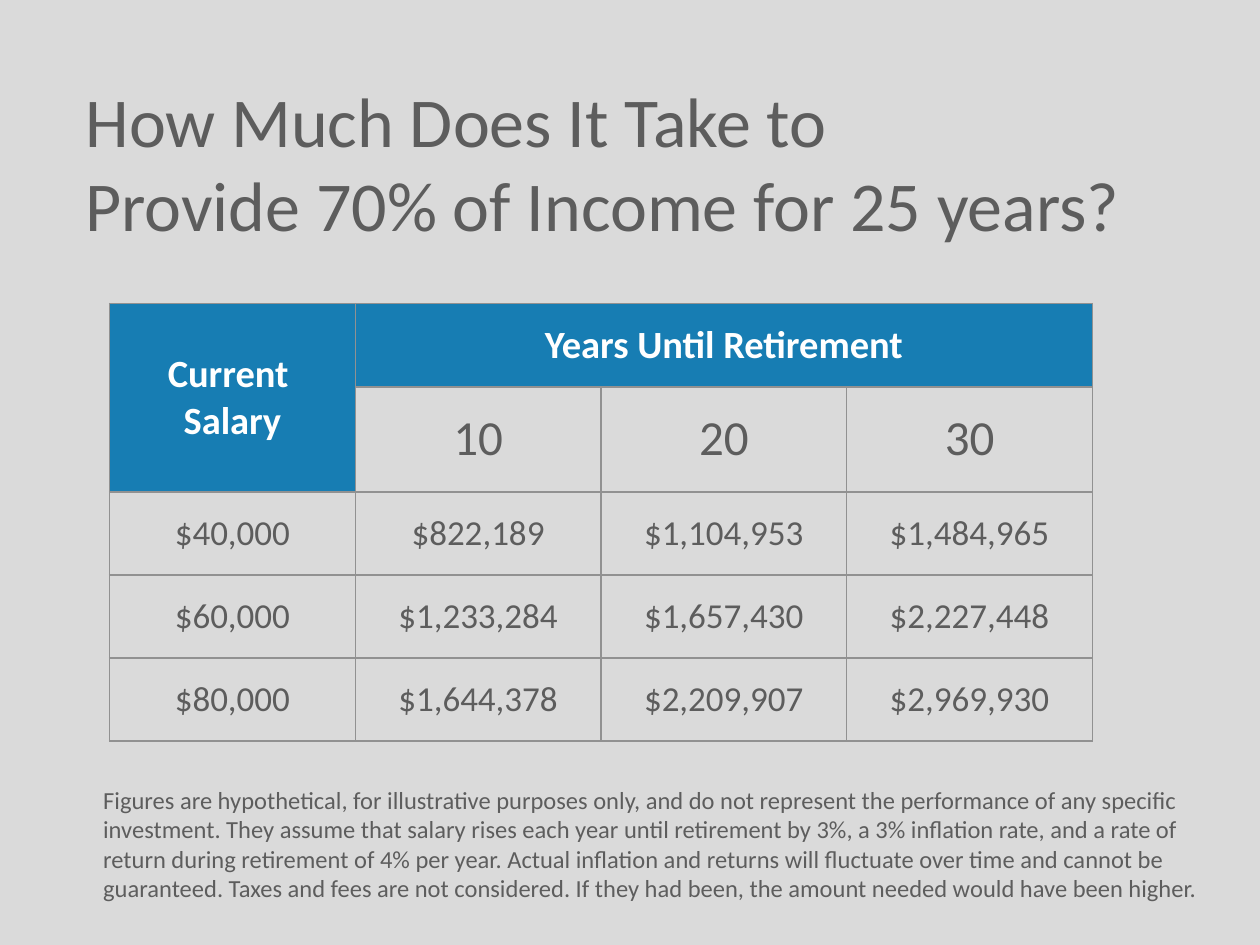
import pptx
import pptx.util
import pptx.dml.color
import pptx.enum.text
import pptx.oxml
import pptx.oxml.ns

# Content
TITLE = "How Much Does It Take to\vProvide 70% of Income for 25 years?"
NOTE = (
    "Figures are hypothetical, for illustrative purposes only, and do not represent "
    "the performance of any specific investment. They assume that salary rises each "
    "year until retirement by 3%, a 3% inflation rate, and a rate of return during "
    "retirement of 4% per year. Actual inflation and returns will fluctuate over time "
    "and cannot be guaranteed. Taxes and fees are not considered. If they had been, "
    "the amount needed would have been higher."
)
ROWS = [
    ["Current \vSalary", "Years Until Retirement", "", ""],
    ["", "10", "20", "30"],
    ["$40,000", "$822,189", "$1,104,953", "$1,484,965"],
    ["$60,000", "$1,233,284", "$1,657,430", "$2,227,448"],
    ["$80,000", "$1,644,378", "$2,209,907", "$2,969,930"],
]
COL_W = 1.95
ROW_H = [0.66, 0.83, 0.66, 0.66, 0.66]
BACK, GREY, WHITE, BLUE, RULE = "DADADA", "5D5D5D", "FFFFFF", "177DB3", "919191"
HEADER = {"size": 22, "color": WHITE, "bold": True}
YEARS = {"size": 28, "color": GREY, "bold": False}
AMOUNT = {"size": 20, "color": GREY, "bold": False}

Inches = pptx.util.Inches
MIDDLE = pptx.enum.text.MSO_ANCHOR.MIDDLE


def rgb(value):
    return pptx.dml.color.RGBColor.from_string(value)


def write(tf, text, size, color, bold=False):
    p = tf.paragraphs[0]
    p.text = text
    for r in p.runs:
        for name, value in {"name": "Calibri", "size": pptx.util.Pt(size), "bold": bold}.items():
            setattr(r.font, name, value)
        r.font.color.rgb = rgb(color)
    return p


def add_text(s, box, text, size, anchor):
    tf = s.shapes.add_textbox(*map(Inches, box)).text_frame
    tf.word_wrap = True
    tf.vertical_anchor = anchor
    write(tf, text, size, GREY)


def add_borders(cell):
    tc_pr = cell._tc.get_or_add_tcPr()
    for i, side in enumerate(("lnL", "lnR", "lnT", "lnB")):
        tc_pr.insert(i, pptx.oxml.parse_xml(
            f'<a:{side} {pptx.oxml.ns.nsdecls("a")} w="12700"><a:solidFill>'
            f'<a:srgbClr val="{RULE}"/></a:solidFill></a:{side}>'))


prs = pptx.Presentation()
prs.slide_width, prs.slide_height = Inches(10), Inches(7.5)
s = prs.slides.add_slide(prs.slide_layouts[6])
s.background.fill.solid()
s.background.fill.fore_color.rgb = rgb(BACK)

# Title and footnote
add_text(s, (0.58, 0.62, 9.18, 1.33), TITLE, 40, MIDDLE)
add_text(s, (0.72, 6.18, 9.05, 1.04), NOTE, 14, pptx.enum.text.MSO_ANCHOR.TOP)

# Salary table
n_cols = len(ROWS[0])
table = s.shapes.add_table(
    len(ROWS), n_cols, Inches(0.87), Inches(2.41),
    Inches(COL_W * n_cols), Inches(sum(ROW_H))).table
table.first_row = table.horz_banding = False
for col in table.columns:
    col.width = Inches(COL_W)
for row, height in zip(table.rows, ROW_H):
    row.height = Inches(height)
table.cell(0, 0).merge(table.cell(1, 0))
table.cell(0, 1).merge(table.cell(0, n_cols - 1))

for i, texts in enumerate(ROWS):
    for j, text in enumerate(texts):
        cell = table.cell(i, j)
        is_header = i == 0 or (i == 1 and j == 0)
        if is_header:
            cell.fill.solid()
            cell.fill.fore_color.rgb = rgb(BLUE)
        else:
            cell.fill.background()
        add_borders(cell)
        cell.vertical_anchor = MIDDLE
        style = HEADER if is_header else YEARS if i == 1 else AMOUNT
        p = write(cell.text_frame, text, **style)
        p.alignment = pptx.enum.text.PP_ALIGN.CENTER

prs.save("out.pptx")
